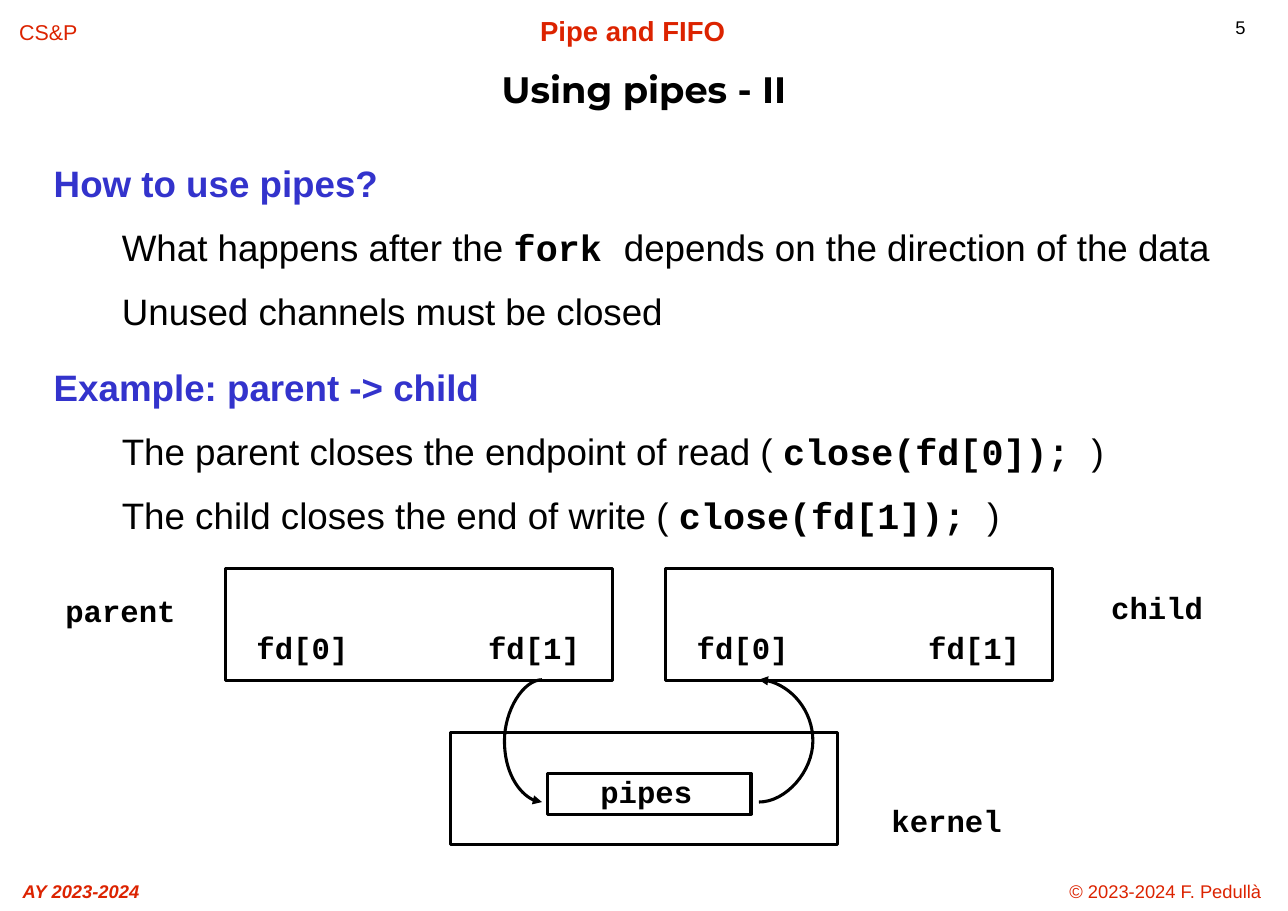
from lxml.etree import SubElement
from pptx import Presentation
from pptx.dml.color import RGBColor
from pptx.enum.shapes import MSO_CONNECTOR, MSO_SHAPE
from pptx.enum.text import MSO_ANCHOR, PP_ALIGN
from pptx.oxml.ns import qn
from pptx.util import Cm, Pt

BLACK = RGBColor(0, 0, 0)
RED = RGBColor(0xDC, 0x23, 0x00)
BLUE = RGBColor(0x33, 0x33, 0xCC)

CODE = {"name": "Courier New", "size": Pt(20), "bold": True}
HEAD = {"name": "Arial", "size": Pt(24), "bold": True}
PLAIN = {"name": "Arial", "size": Pt(24), "bold": False}
MONO = {"name": "Courier New", "size": Pt(24), "bold": True}

# Each body line: level, then its text runs; every second run is code.
BODY = [
    (0, ["How to use pipes?"]),
    (1, ["What happens after the ", "fork ",
         "depends on the direction of the data"]),
    (1, ["Unused channels must be closed"]),
    (0, ["Example: parent -> child"]),
    (1, ["The parent closes the endpoint of read ( ", "close(fd[0]); ", ")"]),
    (1, ["The child closes the end of write ( ", "close(fd[1]); ", ")"]),
]


def style(font, form, color):
    for key, value in form.items():
        setattr(font, key, value)
    font.color.rgb = color


def add_box(slide, left, top, width, height):
    box = slide.shapes.add_textbox(Cm(left), Cm(top), Cm(width), Cm(height))
    box.text_frame.word_wrap = True
    return box.text_frame


def add_label(slide, text, place, form, color=BLACK, space=1.12,
              align=PP_ALIGN.CENTER):
    frame = add_box(slide, *place)
    para = frame.paragraphs[0]
    para.alignment = align
    para.line_spacing = space
    run = para.add_run()
    run.text = text
    style(run.font, form, color)
    return frame


def add_body(slide):
    frame = add_box(slide, 0.99, 3.5, 27.71, 8.82)
    for index, (level, parts) in enumerate(BODY):
        para = frame.add_paragraph() if index else frame.paragraphs[0]
        para.line_spacing = 1.07
        if index:
            para.space_before = Pt(11 if level else 19.2)
        if level:
            para._p.get_or_add_pPr().set("marL", str(Cm(1.57)))
        for order, text in enumerate(parts):
            run = para.add_run()
            run.text = text
            form = MONO if order % 2 else PLAIN if level else HEAD
            style(run.font, form, BLACK if level else BLUE)


def add_frame(slide, left, top, width=8.92, height=2.57):
    shape = slide.shapes.add_shape(
        MSO_SHAPE.RECTANGLE, Cm(left), Cm(top), Cm(width), Cm(height))
    shape.shadow.inherit = False
    shape.fill.background()
    shape.line.color.rgb = BLACK
    shape.line.width = Pt(2)


def add_curve(slide, left, start, end, bend):
    """Draw an arrow between two heights; bend is in multiples of its tiny width."""
    line = slide.shapes.add_connector(
        MSO_CONNECTOR.CURVE, Cm(left + 0.001), Cm(start), Cm(left), Cm(end))
    line.line.color.rgb = BLACK
    line.line.width = Pt(2)
    props = line._element.spPr
    guides = props.find(qn("a:prstGeom")).get_or_add_avLst()
    SubElement(guides, qn("a:gd"), name="adj1", fmla=f"val {bend * 100000}")
    SubElement(line.line._get_or_add_ln(), qn("a:tailEnd"), type="triangle")
    SubElement(props, qn("a:effectLst"))


def add_margins(slide):
    """Add the header, the footer and the page number."""
    small = {"name": "Arial", "size": Pt(12)}
    add_label(slide, "CS&P", (0.15, 0.3, 1.93, 0.84),
              small | {"size": Pt(14)}, RED, 1.01)
    add_label(slide, "Pipe and FIFO", (10.54, 0.18, 8.1, 0.84),
              small | {"size": Pt(18), "bold": True}, RED, 1.01)
    add_label(slide, "5", (28.24, 0.25, 1.4, 0.89), small, BLACK, 1.01,
              PP_ALIGN.LEFT)
    add_label(slide, "AY 2023-2024", (-1.14, 20.17, 6.02, 0.84),
              small | {"bold": True, "italic": True}, RED, 1.01)
    add_label(slide, "© 2023-2024 F. Pedullà", (24.03, 20.17, 5.69, 0.84),
              small, RED, 1.01)


def add_scheme(slide):
    """Draw parent and child joined by the pipe in the kernel."""
    for left in (5.2, 15.35):
        add_frame(slide, left, 13.11)
        for end in range(2):
            add_label(slide, f"fd[{end}]",
                      (left + 0.16 + 5.34 * end, 14.27, 3.23, 1.4), CODE)
    add_frame(slide, 10.39, 16.89)
    add_frame(slide, 12.62, 17.83, 4.7, 0.94)
    for text, left, top, width in (
            ("parent", 0.89, 13.41, 3.78), ("child", 25.07, 13.36, 3.23),
            ("kernel", 19.94, 18.26, 3.78), ("pipes", 13.56, 17.6, 2.69)):
        add_label(slide, text, (left, top, width, 1.4), CODE)
    add_curve(slide, 12.5, 15.67, 18.49, 434)
    add_curve(slide, 17.5, 18.49, 15.67, -622)


def main():
    deck = Presentation()
    deck.slide_width, deck.slide_height = Cm(29.7), Cm(21)
    slide = deck.slides.add_slide(deck.slide_layouts[6])
    add_margins(slide)
    title = add_label(slide, "Using pipes - II", (0.69, 1.32, 28.32, 1.6),
                      {"name": "Montserrat", "size": Pt(24), "bold": True},
                      space=0.85)
    title.vertical_anchor = MSO_ANCHOR.MIDDLE
    add_body(slide)
    add_scheme(slide)
    deck.save("out.pptx")


if __name__ == "__main__":
    main()
